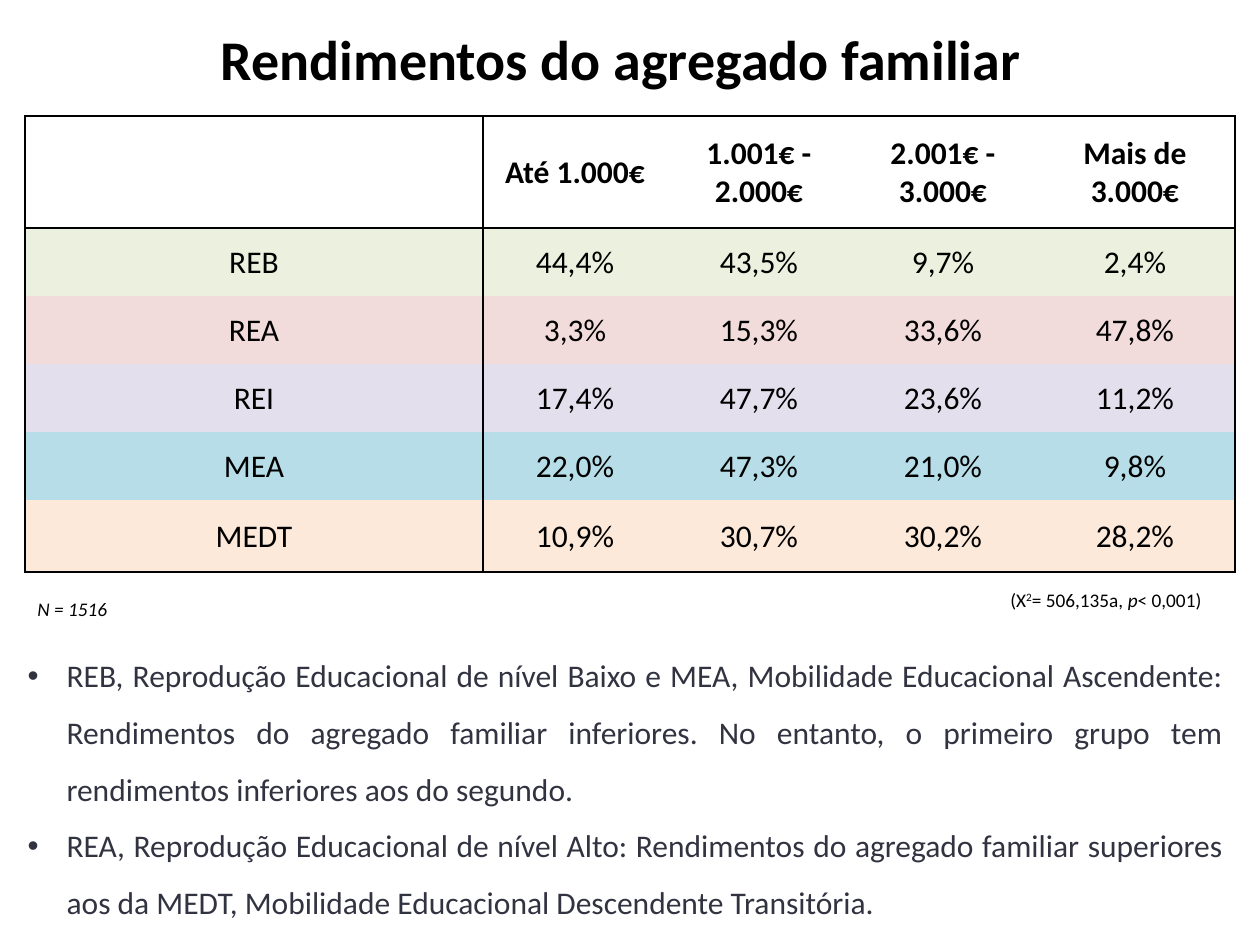
from lxml import etree
from pptx import Presentation
from pptx import util as u
from pptx.dml.color import RGBColor
from pptx.enum import text
from pptx.oxml.ns import qn

PX = 914400 // 126
FONT = "Calibri"
COLORS = {"ink": "000000", "body": "323341"}
NO_STYLE = "{2D5ABB26-0587-4C30-8999-92F81FD0307C}"
ALIGN = text.PP_ALIGN

TITLE = "Rendimentos do agregado familiar"
HEADER = ["", "Até 1.000€", "1.001€ - 2.000€", "2.001€ - 3.000€", "Mais de 3.000€"]
GROUPS = [
    ("EBF1DE", ["REB", "44,4%", "43,5%", "9,7%", "2,4%"]),
    ("F2DCDB", ["REA", "3,3%", "15,3%", "33,6%", "47,8%"]),
    ("E4DFEC", ["REI", "17,4%", "47,7%", "23,6%", "11,2%"]),
    ("B7DEE8", ["MEA", "22,0%", "47,3%", "21,0%", "9,8%"]),
    ("FDE9D9", ["MEDT", "10,9%", "30,7%", "30,2%", "28,2%"]),
]
COL_WIDTHS = [458, 184, 184, 184, 200]
ROW_HEIGHTS = [112, 68, 68, 68, 68, 72]
FINDINGS = [
    "REB, Reprodução Educacional de nível Baixo e MEA, Mobilidade Educacional "
    "Ascendente: Rendimentos do agregado familiar inferiores. No entanto, o "
    "primeiro grupo tem rendimentos inferiores aos do segundo.",
    "REA, Reprodução Educacional de nível Alto: Rendimentos do agregado familiar "
    "superiores aos da MEDT, Mobilidade Educacional Descendente Transitória.",
]


def px(n):
    return u.Emu(n * PX)


def place(sp, box):
    sp.left, sp.top, sp.width, sp.height = map(px, box)


def write(p, words, size=18, color="ink", bold=False, italic=False, raised=0):
    """Append a formatted run; raised is the superscript offset in percent."""
    r = p.add_run()
    r.text = words
    r.font.name, r.font.size = FONT, u.Pt(size)
    r.font.bold, r.font.italic = bold, italic
    r.font.color.rgb = RGBColor.from_string(COLORS[color])
    if raised:
        r.font._element.set("baseline", str(raised * 1000))


def add_title(slide, box):
    sp = slide.shapes.title
    place(sp, box)
    tf = sp.text_frame
    tf.vertical_anchor = text.MSO_ANCHOR.MIDDLE
    tf.auto_size = text.MSO_AUTO_SIZE.NONE
    tf.paragraphs[0].alignment = ALIGN.CENTER
    write(tf.paragraphs[0], TITLE, size=32, bold=True)


def set_borders(cell, sides):
    """Draw the sides named in L, R, T, B order and blank the others."""
    tc_pr = cell._tc.get_or_add_tcPr()
    for side in "LRTB":
        ln = etree.SubElement(tc_pr, qn("a:ln" + side), w=str(u.Pt(1)))
        if side in sides:
            fill = etree.SubElement(ln, qn("a:solidFill"))
            etree.SubElement(fill, qn("a:srgbClr"), val=COLORS["ink"])
        else:
            etree.SubElement(ln, qn("a:noFill"))


def add_income_table(slide, left, top):
    rows = [(None, HEADER)] + GROUPS
    last_row, last_col = len(rows) - 1, len(HEADER) - 1
    frame = slide.shapes.add_table(len(rows), len(HEADER), px(left), px(top),
                                   px(sum(COL_WIDTHS)), px(sum(ROW_HEIGHTS)))
    table = frame.table
    table.first_row = table.horz_banding = False
    table._tbl.tblPr.find(qn("a:tableStyleId")).text = NO_STYLE
    for col, width in zip(table.columns, COL_WIDTHS):
        col.width = px(width)
    for row, height in zip(table.rows, ROW_HEIGHTS):
        row.height = px(height)
    for i, (fill, values) in enumerate(rows):
        for j, value in enumerate(values):
            cell = table.cell(i, j)
            cell.vertical_anchor = text.MSO_ANCHOR.MIDDLE
            cell.margin_left = cell.margin_right = cell.margin_top = px(1)
            cell.margin_bottom = 0
            edges = {"L": j < 2, "R": j in (0, last_col),
                     "T": i < 2, "B": i in (0, last_row)}
            set_borders(cell, [side for side, drawn in edges.items() if drawn])
            if fill:
                cell.fill.solid()
                cell.fill.fore_color.rgb = RGBColor.from_string(fill)
            else:
                cell.fill.background()
            p = cell.text_frame.paragraphs[0]
            p.alignment = ALIGN.CENTER
            if value:
                write(p, value, bold=i == 0)


def add_note(slide, box, runs, align=ALIGN.LEFT):
    sp = slide.shapes.add_textbox(*map(px, box))
    tf = sp.text_frame
    tf.word_wrap = True
    p = tf.paragraphs[0]
    p.alignment = align
    for words, style in runs:
        write(p, words, size=11, **style)


def add_findings(slide, box):
    sp = slide.placeholders[1]
    place(sp, box)
    tf = sp.text_frame
    tf.auto_size = text.MSO_AUTO_SIZE.NONE
    for i, finding in enumerate(FINDINGS):
        p = tf.add_paragraph() if i else tf.paragraphs[0]
        p.alignment = ALIGN.JUSTIFY
        p.line_spacing = 1.5
        p.space_before = u.Pt(0)
        p_pr = p._p.get_or_add_pPr()
        p_pr.set("marL", str(px(39)))
        p_pr.set("indent", str(-px(39)))
        etree.SubElement(p_pr, qn("a:buFont"), typeface="Arial")
        etree.SubElement(p_pr, qn("a:buChar"), char="•")
        write(p, finding, color="body")


def main():
    prs = Presentation()
    prs.slide_width, prs.slide_height = u.Inches(10), u.Inches(7.5)
    slide = prs.slides.add_slide(prs.slide_layouts[1])
    add_title(slide, (54, 0, 1134, 116))
    add_income_table(slide, 25, 116)
    add_note(slide, (25, 591, 130, 36), [("N = 1516", {"italic": True})])
    add_note(slide, (937, 582, 277, 36),
             [("(X", {}), ("2", {"raised": 30}), ("= 506,135a, ", {}),
              ("p", {"italic": True}), ("< 0,001)", {})], ALIGN.RIGHT)
    add_findings(slide, (15, 631, 1221, 338))
    prs.save("out.pptx")


if __name__ == "__main__":
    main()
